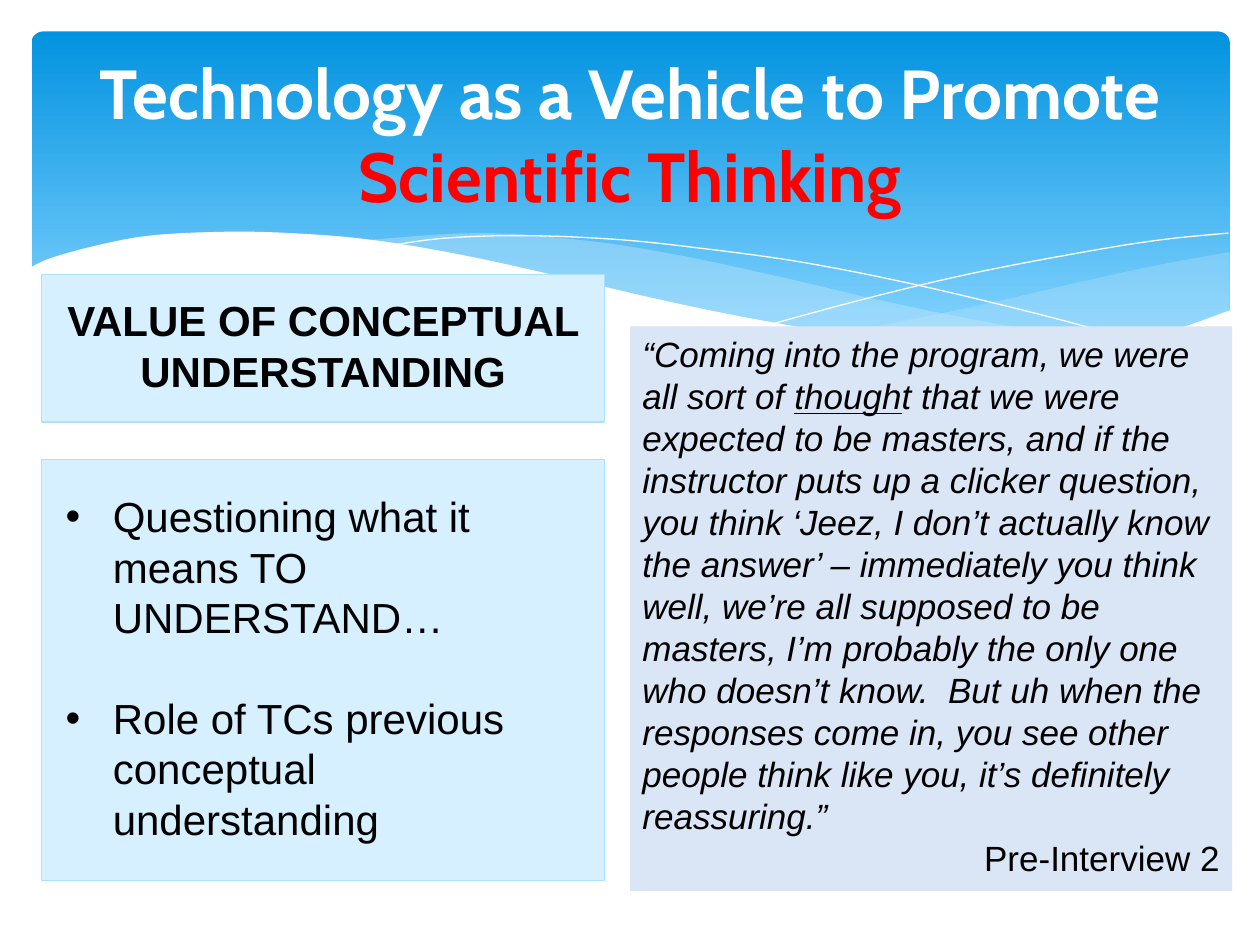
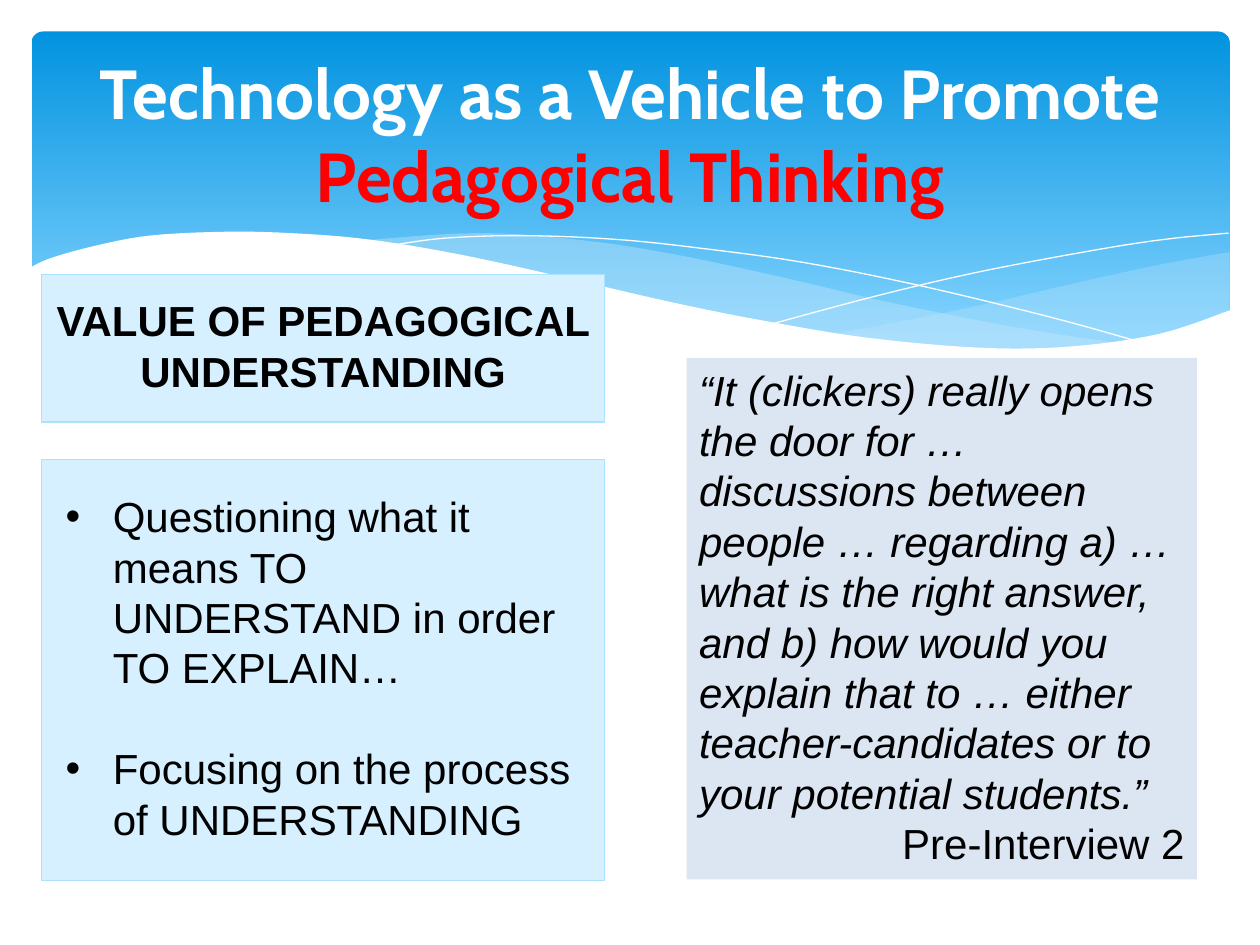
from dataclasses import dataclass
from typing import NamedTuple

import lxml.etree
import pptx
import pptx.dml.color
import pptx.enum.shapes
import pptx.enum.text
import pptx.oxml.ns
import pptx.shapes.autoshape
import pptx.shapes.base
import pptx.slide
import pptx.text.text
import pptx.util

RGBColor = pptx.dml.color.RGBColor
Align = pptx.enum.text.PP_ALIGN
Anchor = pptx.enum.text.MSO_ANCHOR
Kind = pptx.enum.shapes.MSO_SHAPE

WIDE, HIGH = pptx.util.Inches(10), pptx.util.Inches(7.5)
COLS, ROWS = 100, 75

WHITE = RGBColor(0xFF, 0xFF, 0xFF)
BLACK = RGBColor(0, 0, 0)
RED = RGBColor(0xFF, 0, 0)
DEEP = RGBColor(0x02, 0x93, 0xE0)
SKY = RGBColor(0x83, 0xD3, 0xFE)
MIST = RGBColor(0xC6, 0xE7, 0xFC)
PALE = RGBColor(0xD6, 0xF0, 0xFF)
EDGE = RGBColor(0xAD, 0xE2, 0xFE)
LILAC = RGBColor(0xDA, 0xE6, 0xF6)
GREY = RGBColor(0xDC, 0xE6, 0xF2)

Knots = list[tuple[float, float]]


class Box(NamedTuple):
    """Left, top, width and height in grid columns and rows."""
    x: float
    y: float
    w: float
    h: float

    def place(self) -> tuple[int, int, int, int]:
        return col(self.x), row(self.y), col(self.w), row(self.h)


class Run(NamedTuple):
    text: str
    size: float = 24
    color: RGBColor = BLACK
    face: str = "Arial"
    bold: bool = False
    slant: bool = False
    under: bool = False


@dataclass
class Wave:
    """Curves joined end to end: filled when alpha is set, else a hairline."""
    curves: list[Knots]
    color: RGBColor = WHITE
    alpha: int | None = None


@dataclass
class Page:
    theme: str
    head: str
    items: list[str]
    quote: list[Run]
    panel: Box
    tint: RGBColor


BAND = Box(2.5, 2.5, 95.1, 27)
TITLE = Box(5, 3.7, 90, 13.7)
HEAD_CARD = Box(3.3, 21.8, 44.7, 11.7)
HEAD = Box(3.3, 22.9, 44.7, 13.1)
LIST_CARD = Box(3.3, 36.5, 44.7, 33.4)
LIST = Box(4.2, 38.3, 43.2, 29.3)

WAVES = [
    Wave([[(97.6, 20), (92.1, 21), (86.1, 22.3), (77.9, 24.2), (70.6, 25.7), (66.1, 26.5)],
          [(66.1, 26.5), (70.5, 27.1), (75.7, 27.6), (81.4, 27.8), (87.2, 27.4),
           (92.8, 26.3), (97.6, 24.7)]], MIST, 29),
    Wave([[(89.3, 27.3), (80.7, 26), (70.6, 24), (62.9, 22.2), (54.1, 20.3),
           (46.5, 19.1), (38, 18.5), (28.6, 19.1)],
          [(28.6, 19.1), (36.2, 20.3), (44.9, 22.2), (56.6, 24.8), (65, 26.4),
           (72.2, 27.4), (80.7, 27.8), (89.3, 27.3)]], MIST, 40),
    Wave([[(30.9, 19.5), (35.3, 18.9), (41.6, 18.7), (48.9, 19), (55.6, 19.7),
           (63.6, 20.8), (72.7, 22.6), (83.1, 25.1), (90.7, 27.2)]]),
    Wave([[(61.3, 25.7), (69.5, 23.5), (77.6, 21.6), (86.6, 19.9), (92.4, 19),
           (97.5, 18.5)]]),
    Wave([[(97.7, 24.6), (92, 26.5), (85, 27.5), (77.8, 27.6), (68.8, 26.8),
           (60.3, 25.4), (52.9, 23.9), (44.7, 22), (36.5, 20.2), (29.2, 19),
           (23, 18.5), (17.7, 18.4), (11.9, 18.7), (7.6, 19.5), (4, 20.5), (2.3, 21.3)],
          [(2.3, 21.3), (2.3, 32.9)], [(2.3, 32.9), (97.7, 32.9)]], WHITE, 100),
]

PAGES = [
    Page("Scientific Thinking", "VALUE OF CONCEPTUAL UNDERSTANDING",
         ["Questioning what it means TO UNDERSTAND…",
          "Role of TCs previous conceptual understanding"],
         [Run("“Coming into the program, we were all sort of ", 20, slant=True),
          Run("though", 20, slant=True, under=True),
          Run("t that we were expected to be masters, and if the instructor puts up a "
              "clicker question, you think ‘Jeez, I don’t actually know the answer’ – "
              "immediately you think well, we’re all supposed to be masters, I’m probably "
              "the only one who doesn’t know.  But uh when the responses come in, you see "
              "other people think like you, it’s definitely reassuring.”", 20, slant=True)],
         Box(50, 25.9, 47.8, 44.8), LILAC),
    Page("Pedagogical Thinking", "VALUE OF PEDAGOGICAL UNDERSTANDING",
         ["Questioning what it means TO UNDERSTAND in order TO EXPLAIN…",
          "Focusing on the process of UNDERSTANDING"],
         [Run("“It (clickers) really opens the door for … discussions between people … "
              "regarding a) … what is the right answer, and b) how would you explain that "
              "to … either teacher-candidates or to your potential students.”", slant=True)],
         Box(54.5, 28.4, 40.5, 41.4), GREY),
]


def col(n: float) -> int:
    return round(WIDE * n / COLS)


def row(n: float) -> int:
    return round(HIGH * n / ROWS)


def smooth(knots: Knots, steps: int = 6) -> Knots:
    """Catmull-Rom curve through the knots."""
    ends = [knots[0], *knots, knots[-1]]
    dots = [knots[0]]
    for a, b, c, d in zip(ends, ends[1:], ends[2:], ends[3:]):
        for t in (n / steps for n in range(1, steps + 1)):
            x, y = (
                (2 * q + (r - p) * t + (2 * p - 5 * q + 4 * r - s) * t ** 2
                 + (3 * q - p - 3 * r + s) * t ** 3) / 2
                for p, q, r, s in zip(a, b, c, d))
            dots.append((x, y))
    return dots


def draw_wave(slide: pptx.slide.Slide, wave: Wave) -> pptx.shapes.base.BaseShape:
    dots = [(col(x), row(y)) for curve in wave.curves for x, y in smooth(curve)]
    pen = slide.shapes.build_freeform(*dots[0], scale=1.0)
    pen.add_line_segments(dots[1:], close=wave.alpha is not None)
    shape = pen.convert_to_shape()
    shape.shadow.inherit = False
    if wave.alpha is None:
        shape.fill.background()
        shape.line.color.rgb = wave.color
        shape.line.width = 0
        return shape
    shape.fill.solid()
    shape.fill.fore_color.rgb = wave.color
    shape.line.fill.background()
    tone = shape.element.spPr.find(".//" + pptx.oxml.ns.qn("a:srgbClr"))
    lxml.etree.SubElement(tone, pptx.oxml.ns.qn("a:alpha"), val=str(wave.alpha * 1000))
    return shape


def draw_band(slide: pptx.slide.Slide) -> pptx.shapes.base.BaseShape:
    band = slide.shapes.add_shape(Kind.ROUNDED_RECTANGLE, *BAND.place())
    band.adjustments[0] = 0.034
    band.shadow.inherit = False
    band.line.fill.background()
    band.fill.gradient()
    band.fill.gradient_angle = 270
    for stop, color, spot in zip(band.fill.gradient_stops, (DEEP, SKY), (0, 0.9)):
        stop.color.rgb = color
        stop.position = spot
    return band


def dress(layout: pptx.slide.SlideLayout, slide: pptx.slide.Slide) -> None:
    """Draw the band and waves on a slide, then hand them to its layout."""
    for holder in list(layout.placeholders):
        if holder.placeholder_format.idx >= 10:
            layout.shapes.element.remove(holder.element)
    parts = [draw_band(slide), *(draw_wave(slide, wave) for wave in WAVES)]
    for part in parts:
        layout.shapes.element.append(part.element)


def draw_card(slide: pptx.slide.Slide, box: Box) -> None:
    """Put a pale card behind the slide's text."""
    card = slide.shapes.add_shape(Kind.RECTANGLE, *box.place())
    card.shadow.inherit = False
    card.fill.solid()
    card.fill.fore_color.rgb = PALE
    card.line.color.rgb = EDGE
    card.line.width = pptx.util.Pt(0.75)
    slide.shapes.element.insert(2, card.element)


def write(para: pptx.text.text._Paragraph, runs: list[Run], align: Align) -> None:
    para.alignment = align
    para.space_before = pptx.util.Pt(0)
    for item in runs:
        run = para.add_run()
        run.text = item.text
        font = run.font
        font.size, font.name = pptx.util.Pt(item.size), item.face
        font.bold, font.italic, font.underline = item.bold, item.slant, item.under
        font.color.rgb = item.color


def fit(shape: pptx.shapes.autoshape.Shape, box: Box,
        anchor: Anchor) -> pptx.text.text.TextFrame:
    shape.left, shape.top, shape.width, shape.height = box.place()
    frame = shape.text_frame
    frame.word_wrap = True
    frame.auto_size = pptx.enum.text.MSO_AUTO_SIZE.NONE
    frame.vertical_anchor = anchor
    return frame


def add_text(slide: pptx.slide.Slide, box: Box) -> pptx.shapes.autoshape.Shape:
    shape = slide.shapes.add_textbox(*box.place())
    fit(shape, box, Anchor.TOP)
    return shape


def fill_list(frame: pptx.text.text.TextFrame, items: list[str]) -> None:
    for n, item in enumerate(items):
        para = frame.add_paragraph() if n else frame.paragraphs[0]
        write(para, [Run(item)], Align.LEFT)
        para.space_after = pptx.util.Pt(28.8 if n < len(items) - 1 else 0)
        props = para._p.get_or_add_pPr()
        inset = col(3.75)
        props.set("marL", str(inset))
        props.set("indent", str(-inset))
        lxml.etree.SubElement(props, pptx.oxml.ns.qn("a:buFont"), typeface="Arial")
        lxml.etree.SubElement(props, pptx.oxml.ns.qn("a:buChar"), char="•")


def fill_page(slide: pptx.slide.Slide, page: Page) -> None:
    for box in (HEAD_CARD, LIST_CARD):
        draw_card(slide, box)

    title = fit(slide.shapes.title, TITLE, Anchor.MIDDLE)
    look = Run("Technology as a Vehicle to Promote ", 39.6, WHITE, "Cabin", True)
    write(title.paragraphs[0], [look, look._replace(text=page.theme, color=RED)],
          Align.CENTER)
    fill_list(fit(slide.placeholders[1], LIST, Anchor.MIDDLE), page.items)

    head = add_text(slide, HEAD)
    write(head.text_frame.paragraphs[0], [Run(page.head, bold=True)], Align.CENTER)

    quote = add_text(slide, page.panel)
    quote.fill.solid()
    quote.fill.fore_color.rgb = page.tint
    write(quote.text_frame.paragraphs[0], page.quote, Align.LEFT)
    source = Run("Pre-Interview 2", page.quote[0].size)
    write(quote.text_frame.add_paragraph(), [source], Align.RIGHT)


def main() -> None:
    deck = pptx.Presentation()
    deck.slide_width, deck.slide_height = WIDE, HIGH
    layout = deck.slide_layouts[1]
    slides = [deck.slides.add_slide(layout) for _ in PAGES]
    dress(layout, slides[0])
    for slide, page in zip(slides, PAGES):
        fill_page(slide, page)
    deck.save("out.pptx")


if __name__ == "__main__":
    main()
